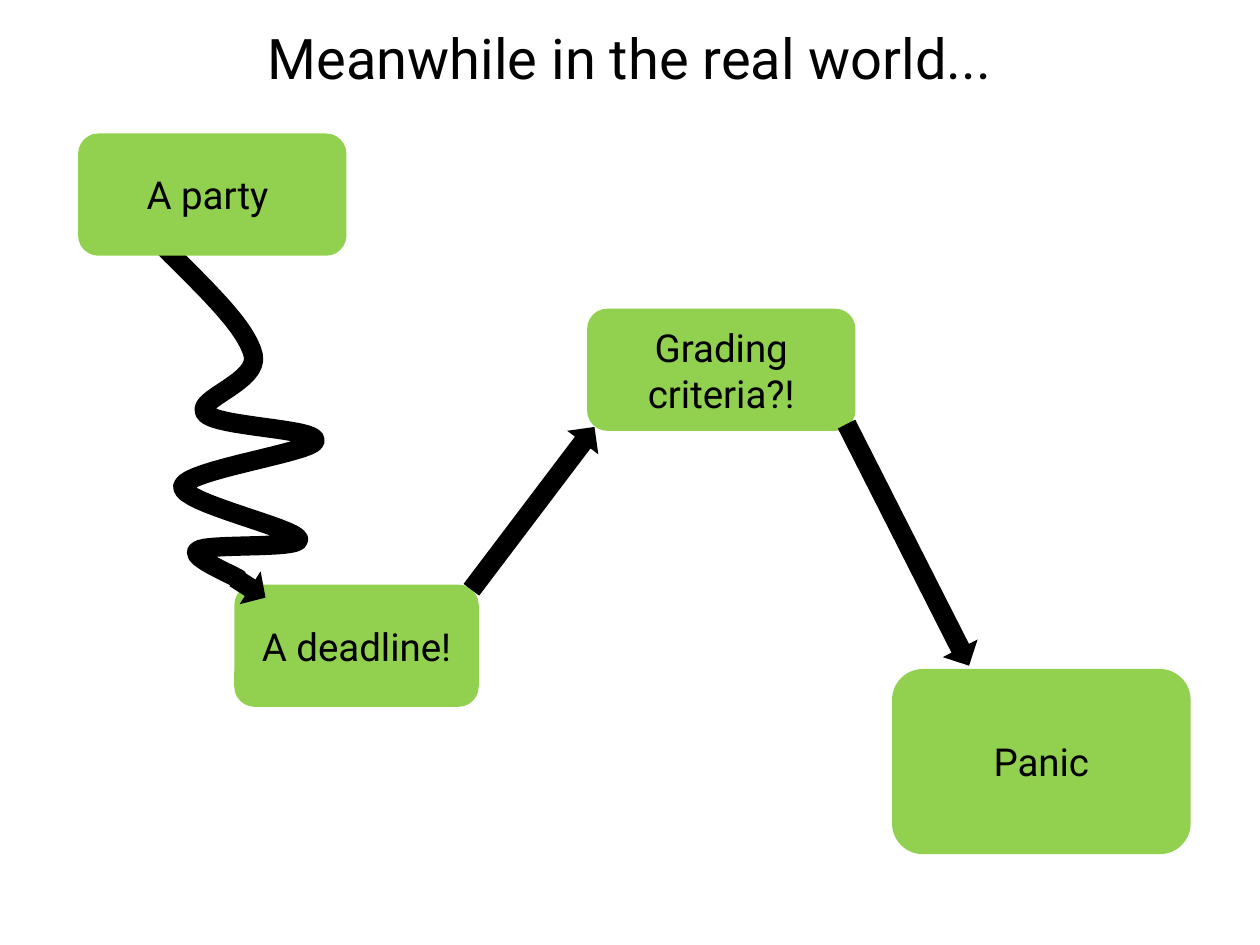
import dataclasses

import pptx
import pptx.dml.color
import pptx.enum.shapes
import pptx.enum.text
import pptx.util

Inches = pptx.util.Inches
Pt = pptx.util.Pt
RGBColor = pptx.dml.color.RGBColor
Shape = pptx.enum.shapes.MSO_SHAPE


@dataclasses.dataclass(frozen=True)
class Theme:
    font: str = "Roboto"
    ink: RGBColor = RGBColor.from_string("000000")
    step: RGBColor = RGBColor.from_string("92D050")
    title_size: int = 32
    step_size: int = 22
    squiggle_width: int = 11


THEME = Theme()
CURVE_STEPS = 16

TITLE_BOX = (0.5, 0.08, 9, 0.75)
STEPS = [
    ("Panic", (7.08, 5.31, 2.37, 1.47)),
    ("A deadline!", (1.86, 4.64, 1.94, 0.97)),
    ("Grading criteria?!", (4.66, 2.45, 2.13, 0.97)),
]
FIRST_STEP = ("A party ", (0.62, 1.06, 2.13, 0.97))
ARROWS = [
    ((3.42, 3.88, 1.62, 0.31), 307.1),
    ((6.13, 4.17, 2.15, 0.31), 63.1),
]
SQUIGGLE_TIP = ((1.84, 4.51, 0.29, 0.31), 32.6)
SQUIGGLE_START = (1.31, 1.97)
SQUIGGLE_CURVES = [
    ((1.63, 2.29), (1.96, 2.6), (2.01, 2.82)),
    ((2.06, 3.03), (1.54, 3.17), (1.63, 3.28)),
    ((1.71, 3.39), (2.53, 3.4), (2.5, 3.5)),
    ((2.48, 3.59), (1.48, 3.73), (1.45, 3.86)),
    ((1.43, 3.99), (2.35, 4.19), (2.37, 4.28)),
    ((2.38, 4.36), (1.64, 4.31), (1.57, 4.37)),
    ((1.49, 4.42), (1.89, 4.58), (1.9, 4.6)),
]


def to_lengths(values):
    return [Inches(value) for value in values]


def write(shape, text, size):
    """Put one centred line of themed text in a shape."""
    frame = shape.text_frame
    frame_format = {
        "word_wrap": True,
        "vertical_anchor": pptx.enum.text.MSO_ANCHOR.MIDDLE,
    }
    for name, value in frame_format.items():
        setattr(frame, name, value)
    para = frame.paragraphs[0]
    para.alignment = pptx.enum.text.PP_ALIGN.CENTER
    span = para.add_run()
    span.text = text
    for name, value in {"name": THEME.font, "size": Pt(size)}.items():
        setattr(span.font, name, value)
    span.font.color.rgb = THEME.ink


def add_title(page, text, box):
    title = page.shapes.title
    for name, value in zip(("left", "top", "width", "height"), to_lengths(box)):
        setattr(title, name, value)
    write(title, text, THEME.title_size)


def add_filled(shapes, kind, box, color):
    shape = shapes.add_shape(kind, *to_lengths(box))
    shape.shadow.inherit = False
    shape.fill.solid()
    shape.fill.fore_color.rgb = color
    shape.line.fill.background()
    return shape


def add_step(page, text, box):
    shape = add_filled(page.shapes, Shape.ROUNDED_RECTANGLE, box, THEME.step)
    write(shape, text, THEME.step_size)


def add_arrow(shapes, box, angle):
    add_filled(shapes, Shape.RIGHT_ARROW, box, THEME.ink).rotation = angle


def curve_points(start, curves):
    """Sample a chain of cubic Bezier curves, leaving out its start."""
    points = []
    for first, second, end in curves:
        for step in range(1, CURVE_STEPS + 1):
            t = step / CURVE_STEPS
            u = 1 - t
            weights = (u**3, 3 * u * u * t, 3 * u * t * t, t**3)
            corners = (start, first, second, end)
            points.append([
                Inches(sum(w * corner[axis] for w, corner in zip(weights, corners)))
                for axis in (0, 1)
            ])
        start = end
    return points


def add_squiggle_arrow(page, start, curves, tip):
    group = page.shapes.add_group_shape()
    add_arrow(group.shapes, *tip)
    builder = group.shapes.build_freeform(*to_lengths(start))
    builder.add_line_segments(curve_points(start, curves), close=False)
    squiggle = builder.convert_to_shape()
    squiggle.shadow.inherit = False
    squiggle.fill.background()
    squiggle.line.color.rgb = THEME.ink
    squiggle.line.width = Pt(THEME.squiggle_width)


def main():
    deck = pptx.Presentation()
    deck.slide_width, deck.slide_height = to_lengths((10, 7.5))
    page = deck.slides.add_slide(deck.slide_layouts.get_by_name("Title Only"))

    add_title(page, "Meanwhile in the real world...", TITLE_BOX)
    for text, box in STEPS:
        add_step(page, text, box)
    add_squiggle_arrow(page, SQUIGGLE_START, SQUIGGLE_CURVES, SQUIGGLE_TIP)
    for box, angle in ARROWS:
        add_arrow(page.shapes, box, angle)
    add_step(page, *FIRST_STEP)  # covers the start of the squiggle

    deck.save("out.pptx")


if __name__ == "__main__":
    main()
